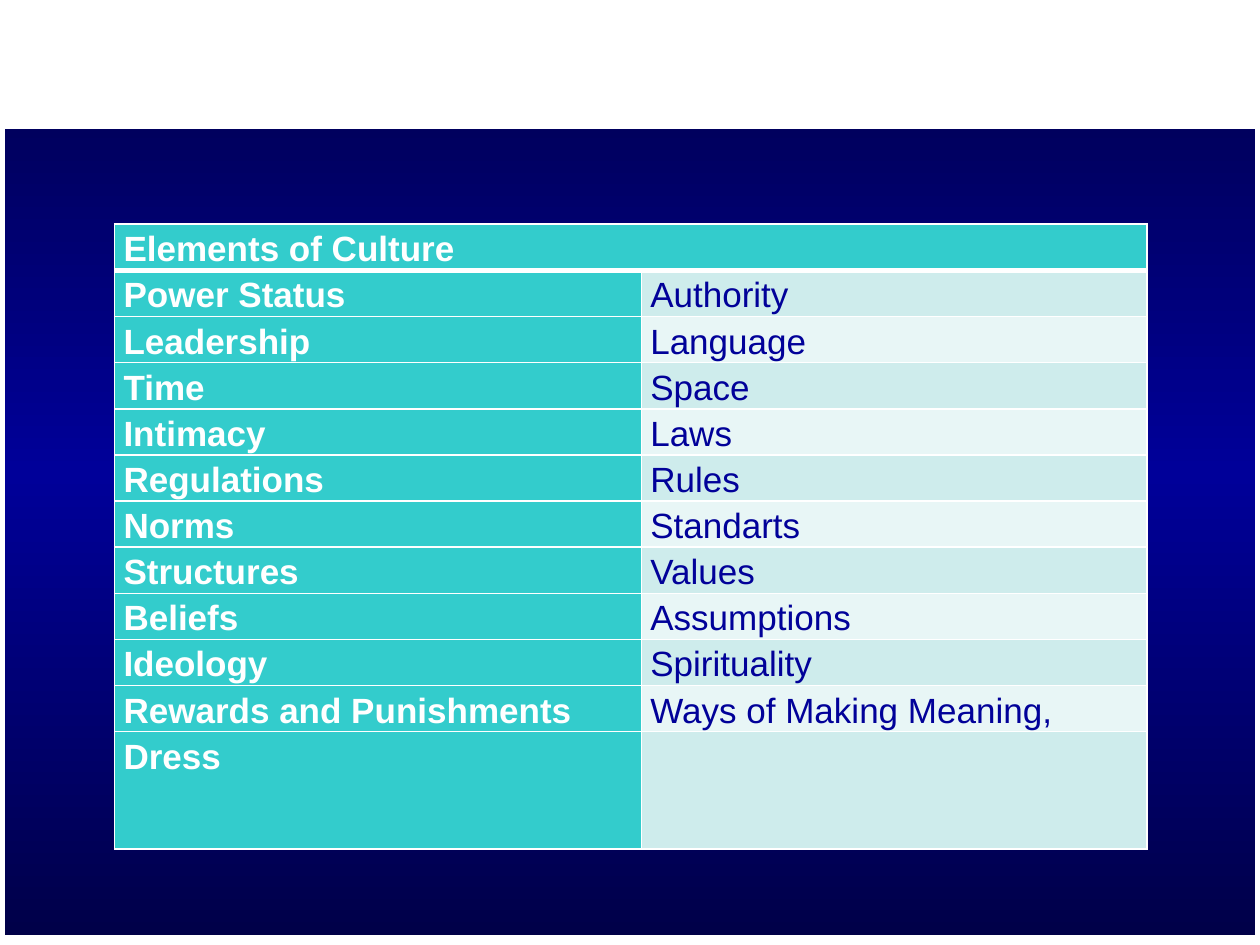
import copy

from pptx import Presentation
from pptx.dml.color import RGBColor
from pptx.enum import shapes, text
from pptx.oxml import parse_xml
from pptx.oxml.ns import nsdecls
from pptx.util import Cm, Pt

# Content
HEADING = "Elements of Culture"
ELEMENTS = [
    ("Power Status", "Authority"),
    ("Leadership", "Language"),
    ("Time", "Space"),
    ("Intimacy", "Laws"),
    ("Regulations", "Rules"),
    ("Norms", "Standarts"),
    ("Structures", "Values"),
    ("Beliefs", "Assumptions"),
    ("Ideology", "Spirituality"),
    ("Rewards and Punishments", "Ways of Making Meaning,"),
    ("Dress", ""),
]

THEME = {
    "font": "Arial", "size": 20,
    "white": "FFFFFF", "ink": "010199", "teal": "33CCCC",
    "bands": ("CEECEC", "E8F6F6"),
    "backdrop": ((0, "000047"), (0.5, "000099"), (1, "000047")),
}

# Layout in centimetres
SLIDE_W, SLIDE_H = 25.4, 19.05
BAND_H, FRAME_H = 2.59, 18.95
TABLE_X, TABLE_Y = 2.31, 4.52
COL_W = (10.62, 10.19)
ROW_H, LAST_ROW_H = 0.93, 2.36


def rgb(color):
    return RGBColor.from_string(color)


def write(tf, content, color, bold=False):
    p = tf.paragraphs[0]
    p.alignment = text.PP_ALIGN.JUSTIFY
    p.line_spacing = 1.15
    p.space_after = Pt(8)
    r = p.add_run()
    r.text = content
    r.font.name = THEME["font"]
    r.font.size = Pt(THEME["size"])
    r.font.bold = bold
    r.font.color.rgb = rgb(color)


def add_rect(slide, height, line_width, fill=None):
    sp = slide.shapes.add_shape(shapes.MSO_SHAPE.RECTANGLE, 0, 0,
                                Cm(SLIDE_W), Cm(height))
    sp.shadow.inherit = False
    if fill:
        sp.fill.solid()
        sp.fill.fore_color.rgb = rgb(fill)
    else:
        sp.fill.background()
    sp.line.color.rgb = rgb(THEME["white"])
    sp.line.width = Pt(line_width)


def style_cell(cell, fill, bottom=1):
    cell.margin_left = cell.margin_right = Cm(0.18)
    cell.margin_top = cell.margin_bottom = 0
    tc_pr = cell._tc.get_or_add_tcPr()
    for side, width in (("L", 1), ("R", 1), ("T", 1), ("B", bottom)):
        tc_pr.append(parse_xml(
            f'<a:ln{side} {nsdecls("a")} w="{Pt(width)}"><a:solidFill>'
            f'<a:srgbClr val="{THEME["white"]}"/></a:solidFill></a:ln{side}>'))
    cell.fill.solid()
    cell.fill.fore_color.rgb = rgb(fill)


def set_backdrop(slide):
    fill = slide.background.fill
    fill.gradient()
    fill.gradient_angle = 270
    first = fill.gradient_stops[0]._gs
    first.addnext(copy.deepcopy(first))
    for stop, (position, color) in zip(fill.gradient_stops, THEME["backdrop"]):
        stop.position = position
        stop.color.rgb = rgb(color)


def add_elements_table(slide):
    n_rows = len(ELEMENTS) + 1
    heights = [ROW_H] * (n_rows - 1) + [LAST_ROW_H]
    table = slide.shapes.add_table(
        n_rows, len(COL_W), Cm(TABLE_X), Cm(TABLE_Y),
        Cm(sum(COL_W)), Cm(sum(heights))).table
    for column, width in zip(table.columns, COL_W):
        column.width = Cm(width)
    for row, height in zip(table.rows, heights):
        row.height = Cm(height)

    # Heading across both columns
    for col in range(len(COL_W)):
        style_cell(table.cell(0, col), THEME["teal"], bottom=3)
    heading = table.cell(0, 0)
    heading.merge(table.cell(0, 1))
    write(heading.text_frame, HEADING, THEME["white"], bold=True)

    # Paired elements, banded on the right
    for i, (left, right) in enumerate(ELEMENTS):
        first, second = table.cell(i + 1, 0), table.cell(i + 1, 1)
        style_cell(first, THEME["teal"])
        write(first.text_frame, left, THEME["white"], bold=True)
        style_cell(second, THEME["bands"][i % 2])
        if right:
            write(second.text_frame, right, THEME["ink"])


def main():
    prs = Presentation()
    prs.slide_width, prs.slide_height = Cm(SLIDE_W), Cm(SLIDE_H)
    slide = prs.slides.add_slide(prs.slide_layouts[6])
    set_backdrop(slide)
    # White top band and outer frame
    add_rect(slide, BAND_H, 0.75, fill=THEME["white"])
    add_rect(slide, FRAME_H, 6)
    add_elements_table(slide)
    prs.save("out.pptx")


if __name__ == "__main__":
    main()
